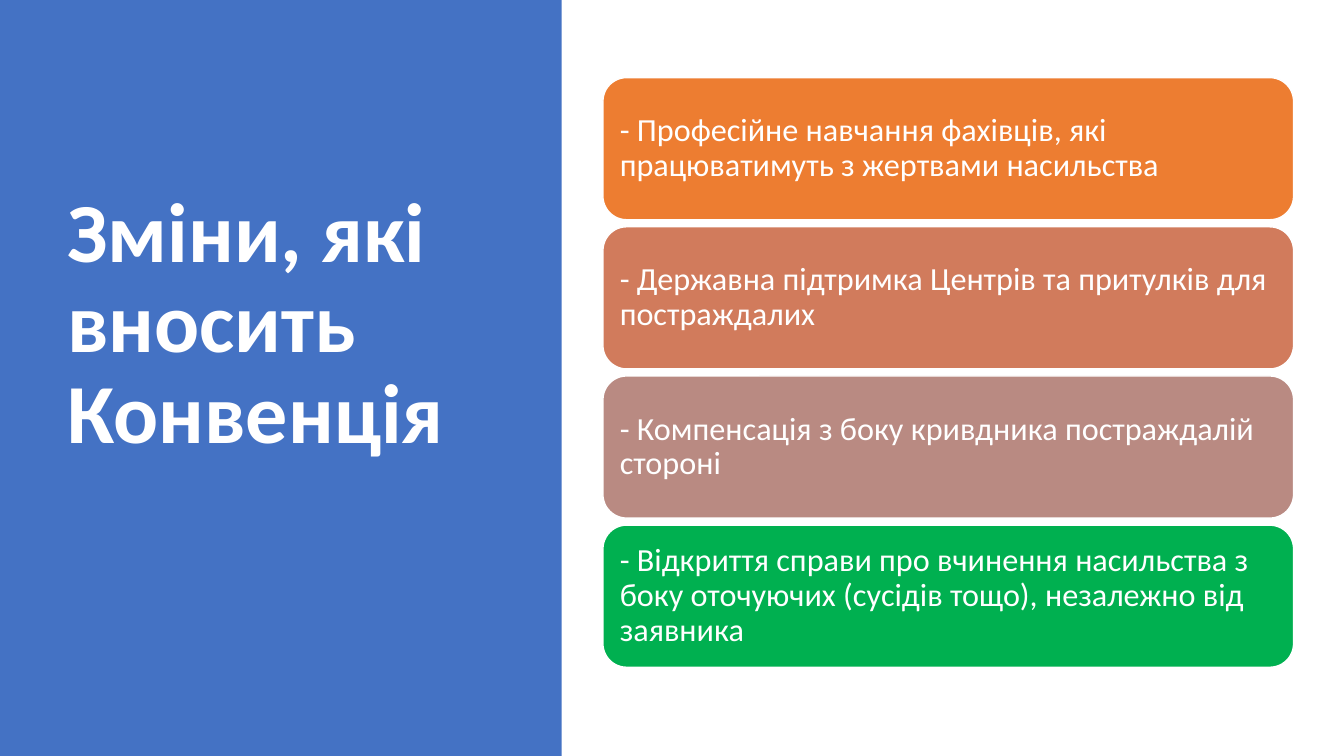
from pptx import Presentation
from pptx.dml.color import RGBColor
from pptx.enum.shapes import MSO_SHAPE as SHAPE
from pptx.enum.text import MSO_ANCHOR as ANCHOR, PP_ALIGN as ALIGN
from pptx.util import Inches, Pt

WHITE = RGBColor(0xFF, 0xFF, 0xFF)
BLUE = RGBColor(0x44, 0x72, 0xC4)
ORANGE = RGBColor(0xED, 0x7D, 0x31)
TERRACOTTA = RGBColor(0xD1, 0x7B, 0x5C)
DUSTY_ROSE = RGBColor(0xB9, 0x8A, 0x82)
GREEN = RGBColor(0x00, 0xB0, 0x50)

PANEL_WIDTH = 5.57
CARD_LEFT, CARD_TOP = 5.98, 0.77
CARD_WIDTH, CARD_HEIGHT = 6.85, 1.41
ROW_PITCH = 1.48

CHANGES = [
    ("- Професійне навчання фахівців, які працюватимуть з жертвами насильства", ORANGE),
    ("- Державна підтримка Центрів та притулків для постраждалих", TERRACOTTA),
    ("- Компенсація з боку кривдника постраждалій стороні", DUSTY_ROSE),
    ("- Відкриття справи про вчинення насильства з боку оточуючих "
     "(сусідів тощо), незалежно від заявника", GREEN),
]


def write(sp, text, size, bold=False):
    """Write white, left-aligned, vertically centred text into a shape."""
    tf = sp.text_frame
    tf.word_wrap = True
    tf.vertical_anchor = ANCHOR.MIDDLE
    tf.text = text
    p = tf.paragraphs[0]
    p.alignment = ALIGN.LEFT
    p.line_spacing = 0.9
    font = p.runs[0].font
    font.name, font.size, font.bold = "Calibri", Pt(size), bold
    font.color.rgb = WHITE
    return tf


def add_block(s, kind, box, color):
    """Add a filled shape without outline or shadow."""
    sp = s.shapes.add_shape(kind, *map(Inches, box))
    sp.shadow.inherit = False
    sp.fill.solid()
    sp.fill.fore_color.rgb = color
    sp.line.fill.background()
    return sp


def add_title(s, text):
    """Add the large title, raised above the centre by its bottom inset."""
    sp = s.shapes.add_textbox(*map(Inches, (0.57, 0.68, 4.16, 6.02)))
    tf = write(sp, text, 60, bold=True)
    tf.margin_bottom = Inches(0.97)


def add_card(s, row, text, color):
    """Add one rounded card in the given row of the right column."""
    box = (CARD_LEFT, CARD_TOP + row * ROW_PITCH, CARD_WIDTH, CARD_HEIGHT)
    sp = add_block(s, SHAPE.ROUNDED_RECTANGLE, box, color)
    sp.line.color.rgb = WHITE
    sp.line.width = Pt(1)
    tf = write(sp, text, 23)
    tf.margin_left = tf.margin_right = Inches(0.1)
    tf.margin_top = tf.margin_bottom = Inches(0.1)


def main():
    """Build the slide and save it."""
    prs = Presentation()
    prs.slide_width, prs.slide_height = Inches(13.33), Inches(7.5)
    s = prs.slides.add_slide(prs.slide_layouts[6])
    add_block(s, SHAPE.RECTANGLE, (0, 0, PANEL_WIDTH, 7.5), BLUE)
    add_title(s, "Зміни, які вносить Конвенція")
    for row, (text, color) in enumerate(CHANGES):
        add_card(s, row, text, color)
    prs.save("out.pptx")


if __name__ == "__main__":
    main()
